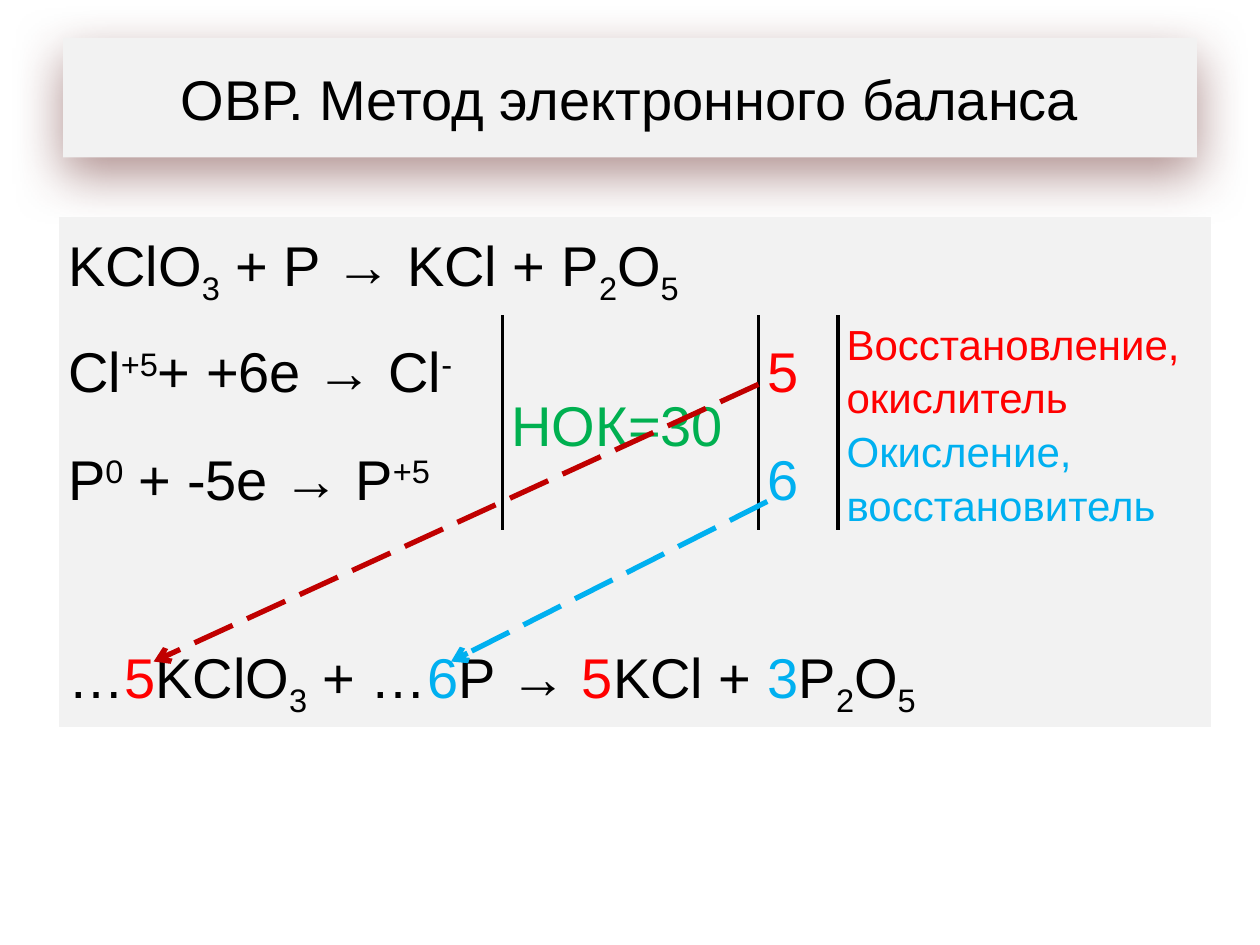
from lxml import etree
from pptx import Presentation
from pptx import util as u
from pptx.dml.color import RGBColor
from pptx.enum import dml, shapes, text
from pptx.oxml import ns

BLACK = RGBColor(0, 0, 0)
PANEL = RGBColor(0xF2, 0xF2, 0xF2)
RED = RGBColor(0xFF, 0, 0)
DARK_RED = RGBColor(0xC0, 0, 0)
BLUE = RGBColor(0, 0xB0, 0xF0)
GREEN = RGBColor(0, 0xB0, 0x50)
SHADOW = RGBColor(0x63, 0x25, 0x23)

FONT = "Arial"
SUB, SUPER = -25000, 30000
NO_STYLE = "{2D5ABB26-0587-4C30-8999-92F81FD0307C}"

# Table grid in inches
COLUMNS = [3.52, 2.03, 0.63, 2.96]
ROWS = [0.78] * 5


def child(parent, tag, **attributes):
    return etree.SubElement(parent, ns.qn(tag), attributes)


def sub(value):
    return (value, BLACK, SUB)


def sup(value):
    return (value, BLACK, SUPER)


def write(frame, runs, size=32):
    """Write one paragraph; a run is plain text or (text, colour, baseline)."""
    para = frame.paragraphs[0]
    para.font.name = FONT
    para.font.size = u.Pt(size)
    for run in runs:
        value, colour, baseline = (run, BLACK, 0) if isinstance(run, str) else run
        span = para.add_run()
        span.text = value
        span.font.color.rgb = colour
        if baseline:
            span._r.get_or_add_rPr().set("baseline", str(baseline))
    return para


def add_title(slide):
    box = slide.shapes.title
    box.left, box.top, box.width, box.height = map(u.Inches, (0.5, 0.3, 9, 0.95))
    box.fill.solid()
    box.fill.fore_color.rgb = PANEL
    box.text_frame.vertical_anchor = text.MSO_ANCHOR.MIDDLE
    para = write(box.text_frame, ["ОВР. Метод электронного баланса"])
    para.alignment = text.PP_ALIGN.CENTER
    # Soft shadow falling straight down
    effects = child(box._element.spPr, "a:effectLst")
    shadow = child(effects, "a:outerShdw", blurRad=str(u.Pt(30)),
                   dist=str(u.Pt(10)), dir="5400000", algn="t", rotWithShape="0")
    colour = child(shadow, "a:srgbClr", val=str(SHADOW))
    child(colour, "a:alpha", val="50000")


def add_border(cell, side):
    line = child(cell._tc.get_or_add_tcPr(), f"a:ln{side}", w=str(u.Pt(2.25)))
    child(child(line, "a:solidFill"), "a:srgbClr", val=str(BLACK))


def add_grid(slide):
    frame = slide.shapes.add_table(
        len(ROWS), len(COLUMNS), u.Inches(0.47), u.Inches(1.72),
        u.Inches(sum(COLUMNS)), u.Inches(sum(ROWS)))
    table = frame.table
    table.first_row = table.horz_banding = False
    table._tbl.tblPr.find(ns.qn("a:tableStyleId")).text = NO_STYLE
    for column, width in zip(table.columns, COLUMNS):
        column.width = u.Inches(width)
    for row, height in zip(table.rows, ROWS):
        row.height = u.Inches(height)

    # Vertical rules on both sides of the common multiple
    for row in (1, 2):
        for column, sides in enumerate(("R", "LR", "L")):
            for side in sides:
                add_border(table.cell(row, column), side)

    for cell in table.iter_cells():
        cell.fill.solid()
        cell.fill.fore_color.rgb = PANEL
        cell.vertical_anchor = text.MSO_ANCHOR.MIDDLE
        cell.margin_left = cell.margin_right = u.Inches(0.07)
        cell.margin_top = cell.margin_bottom = 0

    for row in (0, 3, 4):
        table.cell(row, 0).merge(table.cell(row, 3))
    table.cell(1, 1).merge(table.cell(2, 1))
    return table


def fill_grid(table):
    oxide = ["P", sub("2"), "O", sub("5")]
    contents = {
        (0, 0): ["KClO", sub("3"), " + P → KCl + ", *oxide],
        (1, 0): ["Cl", sup("+5"), "+ +6e → Cl", sup("-")],
        (1, 1): [("НОК=30", GREEN, 0)],
        (1, 2): [("5", RED, 0)],
        (1, 3): [("Восстановление, окислитель", RED, 0)],
        (2, 0): ["P", sup("0"), " + -5e → P", sup("+5")],
        (2, 2): [("6", BLUE, 0)],
        (2, 3): [("Окисление, восстановитель", BLUE, 0)],
        (4, 0): ["…", ("5", RED, 0), "KClO", sub("3"), " + …", ("6", BLUE, 0),
                 "P → ", ("5", RED, 0), "KCl + ", ("3", BLUE, 0), *oxide],
    }
    for (row, column), runs in contents.items():
        size = 24 if column == 3 else 32
        para = write(table.cell(row, column).text_frame, runs, size)
        para.line_spacing = 1.15


def add_arrow(slide, start, end, colour):
    arrow = slide.shapes.add_connector(
        shapes.MSO_CONNECTOR.STRAIGHT, *map(u.Inches, (*start, *end)))
    arrow.line.color.rgb = colour
    arrow.line.width = u.Pt(3)
    arrow.line.dash_style = dml.MSO_LINE.LONG_DASH
    child(arrow.line._get_or_add_ln(), "a:tailEnd", type="arrow")
    child(arrow._element.spPr, "a:effectLst")


def main():
    deck = Presentation()
    deck.slide_width, deck.slide_height = u.Inches(10), u.Inches(7.5)
    slide = deck.slides.add_slide(deck.slide_layouts.get_by_name("Title Only"))
    add_title(slide)
    fill_grid(add_grid(slide))
    # Multipliers carried down to the balanced equation
    add_arrow(slide, (6.02, 3.05), (1.22, 5.25), DARK_RED)
    add_arrow(slide, (6.09, 3.98), (3.58, 5.25), BLUE)
    deck.save("out.pptx")


if __name__ == "__main__":
    main()
